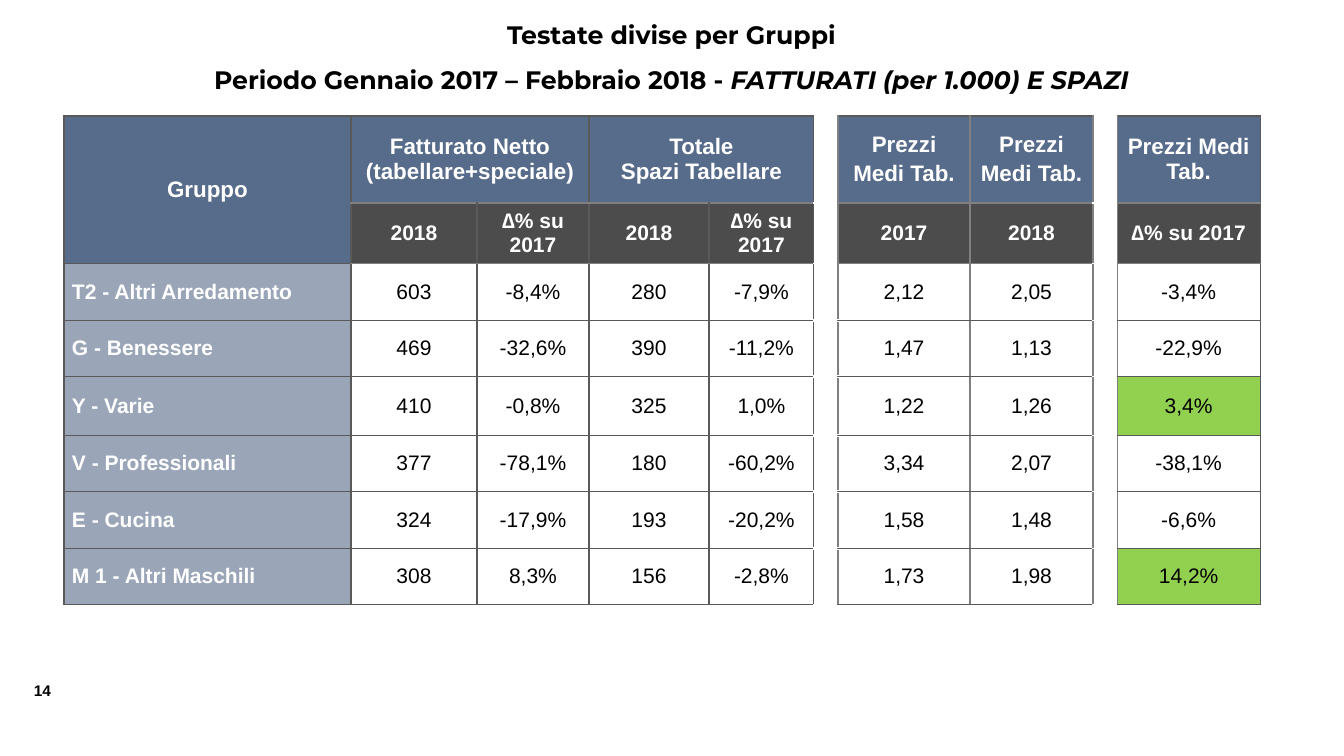
import pptx
import pptx.util
import pptx.dml.color
import pptx.enum.text
import pptx.oxml
import pptx.oxml.ns

RGB = pptx.dml.color.RGBColor
BLUE = RGB(0x57, 0x6B, 0x8A)
BLACK = RGB(0, 0, 0)
WHITE = RGB(0xFF, 0xFF, 0xFF)
GREEN = RGB(0x92, 0xD0, 0x50)
DARK = RGB(0x59, 0x59, 0x59)
GREY = RGB(0x80, 0x80, 0x80)

CENTER = pptx.enum.text.PP_ALIGN.CENTER
MIDDLE = pptx.enum.text.MSO_ANCHOR.MIDDLE
SCALE = 914400 / 100.8

COLS = [287, 126, 112, 120, 105, 24, 132, 123, 24, 143]
ROWS = [87, 60, 57, 56, 59, 56, 57, 56]
GAPS = (5, 8)
HEADS = {
    0: ["Gruppo"],
    1: ["Fatturato Netto (tabellare+speciale)"],
    3: ["Totale", "Spazi Tabellare"],
    6: ["Prezzi", "Medi Tab."],
    7: ["Prezzi", "Medi Tab."],
    9: ["Prezzi Medi Tab."],
}
DELTA = "∆% su 2017"
YEARS = {1: "2018", 2: DELTA, 3: "2018", 4: DELTA, 6: "2017", 7: "2018", 9: DELTA}
GROUPS = [
    ("T2 - Altri Arredamento", "603", "-8,4%", "280", "-7,9%", "2,12", "2,05", "-3,4%"),
    ("G - Benessere", "469", "-32,6%", "390", "-11,2%", "1,47", "1,13", "-22,9%"),
    ("Y - Varie", "410", "-0,8%", "325", "1,0%", "1,22", "1,26", "3,4%"),
    ("V - Professionali", "377", "-78,1%", "180", "-60,2%", "3,34", "2,07", "-38,1%"),
    ("E - Cucina", "324", "-17,9%", "193", "-20,2%", "1,58", "1,48", "-6,6%"),
    ("M 1 - Altri Maschili", "308", "8,3%", "156", "-2,8%", "1,73", "1,98", "14,2%"),
]


def px(n):
    return pptx.util.Emu(round(n * SCALE))


def add_run(para, text, size, color, bold=True, face="Arial", slant=False):
    run = para.add_run()
    run.text = text
    font = run.font
    font.size = pptx.util.Pt(size)
    font.name = face
    font.bold = bold
    font.italic = slant
    font.color.rgb = color


def add_box(slide, left, top, width, height, wrap):
    frame = slide.shapes.add_textbox(px(left), px(top), px(width), px(height)).text_frame
    frame.word_wrap = wrap
    return frame


def add_title(slide):
    frame = add_box(slide, 112, 4, 1119, 100, True)
    frame.margin_top = frame.margin_bottom = 0
    first, second = frame.paragraphs[0], frame.add_paragraph()
    for para in (first, second):
        para.alignment = CENTER
        para.line_spacing = 1.5
    add_run(first, "Testate divise per Gruppi", 18, BLACK, face="Montserrat")
    add_run(second, "Periodo Gennaio 2017 – Febbraio 2018 - ", 18, BLACK, face="Montserrat")
    add_run(second, "FATTURATI (per 1.000) E SPAZI", 18, BLACK, face="Montserrat", slant=True)


def add_page(slide):
    frame = add_box(slide, 24, 676, 42, 29, False)
    add_run(frame.paragraphs[0], "14", 11, BLACK)


def add_edge(cell, side, color, width):
    cell._tc.get_or_add_tcPr().append(pptx.oxml.parse_xml(
        f'<a:ln{side} {pptx.oxml.ns.nsdecls("a")} w="{int(pptx.util.Pt(width))}">'
        f'<a:solidFill><a:srgbClr val="{color}"/></a:solidFill>'
        f'<a:prstDash val="solid"/></a:ln{side}>'))


def set_edges(cell, row, col):
    gap = col in GAPS
    top = WHITE if gap else GREY if col and row in (1, 2) else DARK
    base = WHITE if gap else GREY if col and row < 2 else DARK
    add_edge(cell, "L", GREY if col > 5 else DARK, 1)
    add_edge(cell, "R", GREY if 5 <= col <= 8 else DARK, 1)
    add_edge(cell, "T", top, 2.25 if col == 5 and row > 2 else 1)
    add_edge(cell, "B", base, 2.25 if col == 5 and 2 <= row < 7 else 1)


def set_fill(cell, color, alpha=100):
    cell.fill.solid()
    cell.fill.fore_color.rgb = color
    if alpha < 100:
        qn = pptx.oxml.ns.qn
        tint = cell._tc.tcPr.find(qn("a:solidFill")).find(qn("a:srgbClr"))
        tint.append(pptx.oxml.parse_xml(
            f'<a:alpha {pptx.oxml.ns.nsdecls("a")} val="{alpha * 1000}"/>'))


def paint(cell, row, col):
    if col in GAPS:
        set_fill(cell, WHITE)
    elif row == 0 or (row == 1 and col == 0):
        set_fill(cell, BLUE)
    elif row == 1:
        set_fill(cell, BLACK, 70)
    elif col == 0:
        set_fill(cell, BLUE, 60)
    elif col == 9 and not cell.text_frame.text.startswith("-"):
        set_fill(cell, GREEN)
    else:
        cell.fill.background()


def write(cell, lines, row, col):
    cell.vertical_anchor = MIDDLE
    head = row < 2
    cell.margin_left = px(10 if head else 8 if col == 0 else 0)
    cell.margin_right = px(10 if head else 0)
    cell.margin_top = cell.margin_bottom = px(5 if head else 0)
    label = head or col == 0
    frame = cell.text_frame
    for i, line in enumerate(lines):
        para = frame.add_paragraph() if i else frame.paragraphs[0]
        if head or col:
            para.alignment = CENTER
        if i and col > 5:
            para.space_before = pptx.util.Pt(3)
        add_run(para, line, 15 if row else 16, WHITE if label else BLACK, label)


def add_grid(slide):
    shape = slide.shapes.add_table(
        len(ROWS), len(COLS), px(64), px(116), px(sum(COLS)), px(sum(ROWS)))
    table = shape.table
    table.first_row = table.horz_banding = False
    for col, width in enumerate(COLS):
        table.columns[col].width = px(width)
    for row, height in enumerate(ROWS):
        table.rows[row].height = px(height)
    slots = [col for col in range(len(COLS)) if col not in GAPS]
    texts = [HEADS, {col: [text] for col, text in YEARS.items()}]
    texts += [{col: [text] for col, text in zip(slots, group)} for group in GROUPS]
    for row, line in enumerate(texts):
        for col in range(len(COLS)):
            cell = table.cell(row, col)
            if col in line:
                write(cell, line[col], row, col)
            set_edges(cell, row, col)
            paint(cell, row, col)
    for row, col, end in ((0, 0, (1, 0)), (0, 1, (0, 2)), (0, 3, (0, 4))):
        table.cell(row, col).merge(table.cell(*end))


def main():
    deck = pptx.Presentation()
    deck.slide_width, deck.slide_height = px(1344), px(756)
    slide = deck.slides.add_slide(deck.slide_layouts[6])
    add_page(slide)
    add_title(slide)
    add_grid(slide)
    deck.save("out.pptx")


if __name__ == "__main__":
    main()
